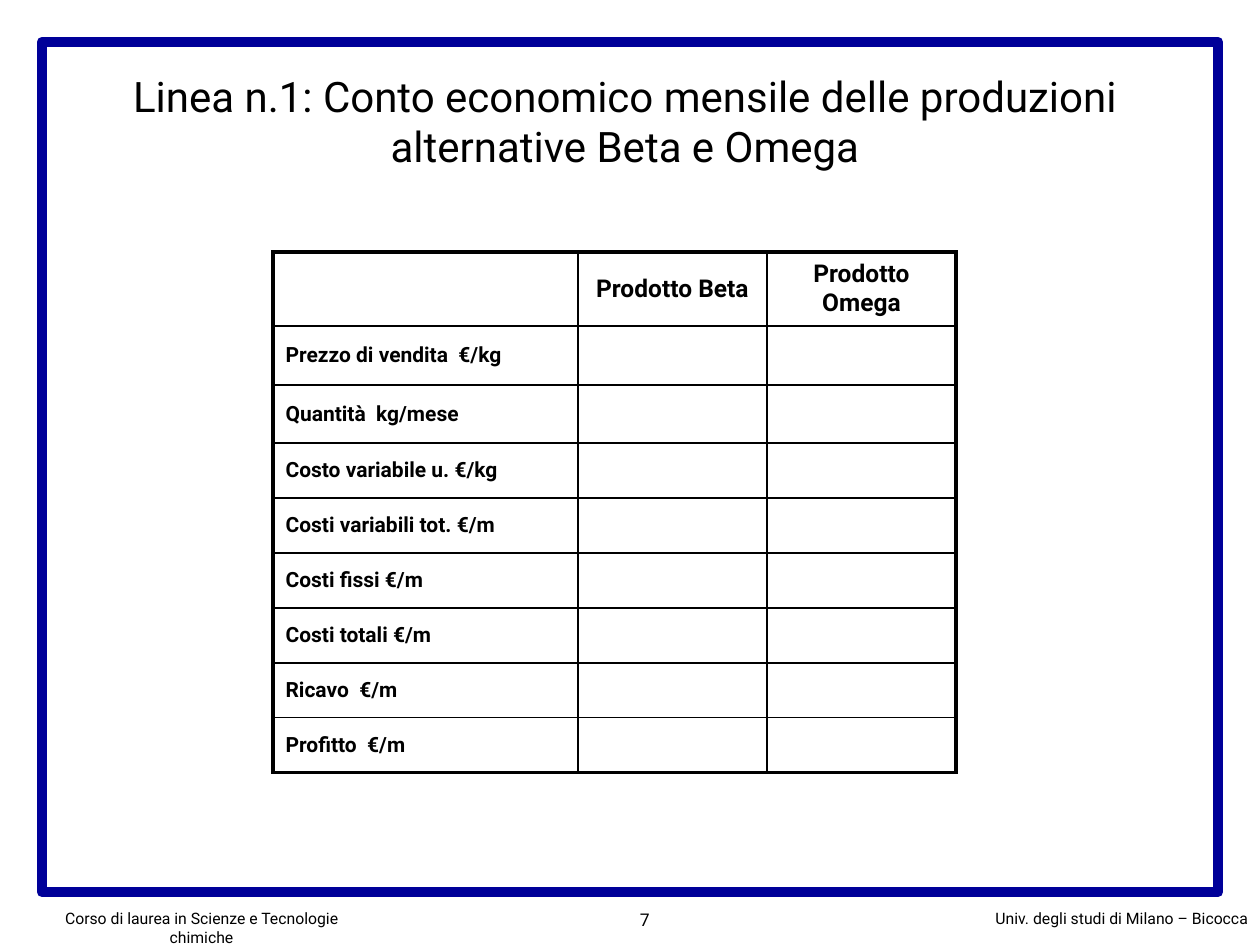
"""Build the slide with the monthly income statement of production line 1."""
from dataclasses import dataclass

from lxml import etree
from pptx import Presentation
from pptx import util as u
from pptx.dml.color import RGBColor
from pptx.enum import shapes, text
from pptx.oxml.ns import qn

EMU_PER_PX = 914400 / 126


@dataclass(frozen=True)
class Theme:
    font: str = "Roboto"
    ink: str = "000000"
    frame: str = "000099"
    title_pt: int = 24
    header_pt: int = 14
    row_pt: int = 12
    number_pt: int = 10
    footer_pt: int = 9
    frame_pt: float = 6
    outer_pt: float = 2.25
    inner_pt: float = 1


@dataclass(frozen=True)
class Box:
    left: int
    top: int
    width: int
    height: int


@dataclass(frozen=True)
class Label:
    wording: str
    box: Box
    size: int
    align: text.PP_ALIGN
    anchor: text.MSO_ANCHOR = text.MSO_ANCHOR.TOP


THEME = Theme()
ALIGN = text.PP_ALIGN
FRAME = Box(42, 42, 1176, 850)
STATEMENT = Box(273, 252, 683, 521)
COLUMN_WIDTHS = (305, 189, 189)
ROW_HEIGHTS = (74, 59, 58) + (55,) * 6
PRODUCTS = ("Prodotto Beta", "Prodotto Omega")
ITEMS = (
    "Prezzo di vendita  €/kg",
    "Quantità  kg/mese",
    "Costo variabile u. €/kg",
    "Costi variabili tot. €/m",
    "Costi fissi €/m",
    "Costi totali €/m",
    "Ricavo  €/m",
    "Profitto  €/m",
)
LABELS = (
    Label("Corso di laurea in Scienze e Tecnologie chimiche",
          Box(24, 903, 355, 32), THEME.footer_pt, ALIGN.CENTER),
    Label("Univ. degli studi di Milano – Bicocca",
          Box(914, 903, 346, 32), THEME.footer_pt, ALIGN.RIGHT),
    Label("7", Box(399, 903, 263, 63), THEME.number_pt, ALIGN.RIGHT),
    Label("Linea n.1: Conto economico mensile delle produzioni alternative Beta e Omega",
          Box(32, 63, 1186, 116), THEME.title_pt, ALIGN.CENTER, text.MSO_ANCHOR.MIDDLE),
)


def px(length: int) -> u.Emu:
    """Turn pixels into EMU."""
    return u.Emu(round(length * EMU_PER_PX))


def place(box: Box) -> tuple:
    """Give the position and size of a box in EMU."""
    return px(box.left), px(box.top), px(box.width), px(box.height)


def write(frame, wording: str, size: int, align: text.PP_ALIGN, bold: bool = False) -> None:
    """Write one styled run into the first paragraph of a text frame."""
    paragraph = frame.paragraphs[0]
    paragraph.alignment = align
    run = paragraph.add_run()
    run.text = wording
    run.font.name = THEME.font
    run.font.size = u.Pt(size)
    run.font.bold = bold
    run.font.color.rgb = RGBColor.from_string(THEME.ink)


def draw_frame(slide) -> None:
    """Draw the border around the slide content."""
    border = slide.shapes.add_shape(shapes.MSO_SHAPE.RECTANGLE, *place(FRAME))
    border.shadow.inherit = False
    border.fill.background()
    border.line.color.rgb = RGBColor.from_string(THEME.frame)
    border.line.width = u.Pt(THEME.frame_pt)


def draw_label(slide, label: Label) -> None:
    """Draw a wrapped line of text."""
    frame = slide.shapes.add_textbox(*place(label.box)).text_frame
    frame.word_wrap = True
    frame.vertical_anchor = label.anchor
    write(frame, label.wording, label.size, label.align)


def rule_cell(cell, outer_sides: dict[str, bool]) -> None:
    """Draw the four borders of a cell, thicker on the outer sides."""
    properties = cell._tc.get_or_add_tcPr()
    for position, (side, is_outer) in enumerate(outer_sides.items()):
        width = THEME.outer_pt if is_outer else THEME.inner_pt
        border = etree.Element(qn(f"a:{side}"), w=str(u.Pt(width)))
        fill = etree.SubElement(border, qn("a:solidFill"))
        etree.SubElement(fill, qn("a:srgbClr"), val=THEME.ink)
        properties.insert(position, border)


def draw_statement(slide) -> None:
    """Draw the income statement with its empty value cells."""
    grid = slide.shapes.add_table(
        len(ROW_HEIGHTS), len(COLUMN_WIDTHS), *place(STATEMENT)).table
    grid.first_row = grid.horz_banding = False
    for column, width in zip(grid.columns, COLUMN_WIDTHS):
        column.width = px(width)
    for row, height in zip(grid.rows, ROW_HEIGHTS):
        row.height = px(height)
    last_row, last_column = len(ROW_HEIGHTS) - 1, len(COLUMN_WIDTHS) - 1
    for r in range(last_row + 1):
        for c in range(last_column + 1):
            cell = grid.cell(r, c)
            cell.fill.background()
            cell.vertical_anchor = text.MSO_ANCHOR.MIDDLE
            rule_cell(cell, {"lnL": c == 0, "lnR": c == last_column,
                             "lnT": r == 0, "lnB": r == last_row})
    for c, product in enumerate(PRODUCTS, 1):
        write(grid.cell(0, c).text_frame, product, THEME.header_pt, ALIGN.CENTER, True)
    for r, item in enumerate(ITEMS, 1):
        write(grid.cell(r, 0).text_frame, item, THEME.row_pt, ALIGN.LEFT, True)


def main() -> None:
    """Build and save the presentation."""
    deck = Presentation()
    deck.slide_width, deck.slide_height = px(1260), px(945)
    slide = deck.slides.add_slide(deck.slide_layouts[6])
    draw_frame(slide)
    draw_statement(slide)
    for label in LABELS:
        draw_label(slide, label)
    deck.save("out.pptx")


if __name__ == "__main__":
    main()
